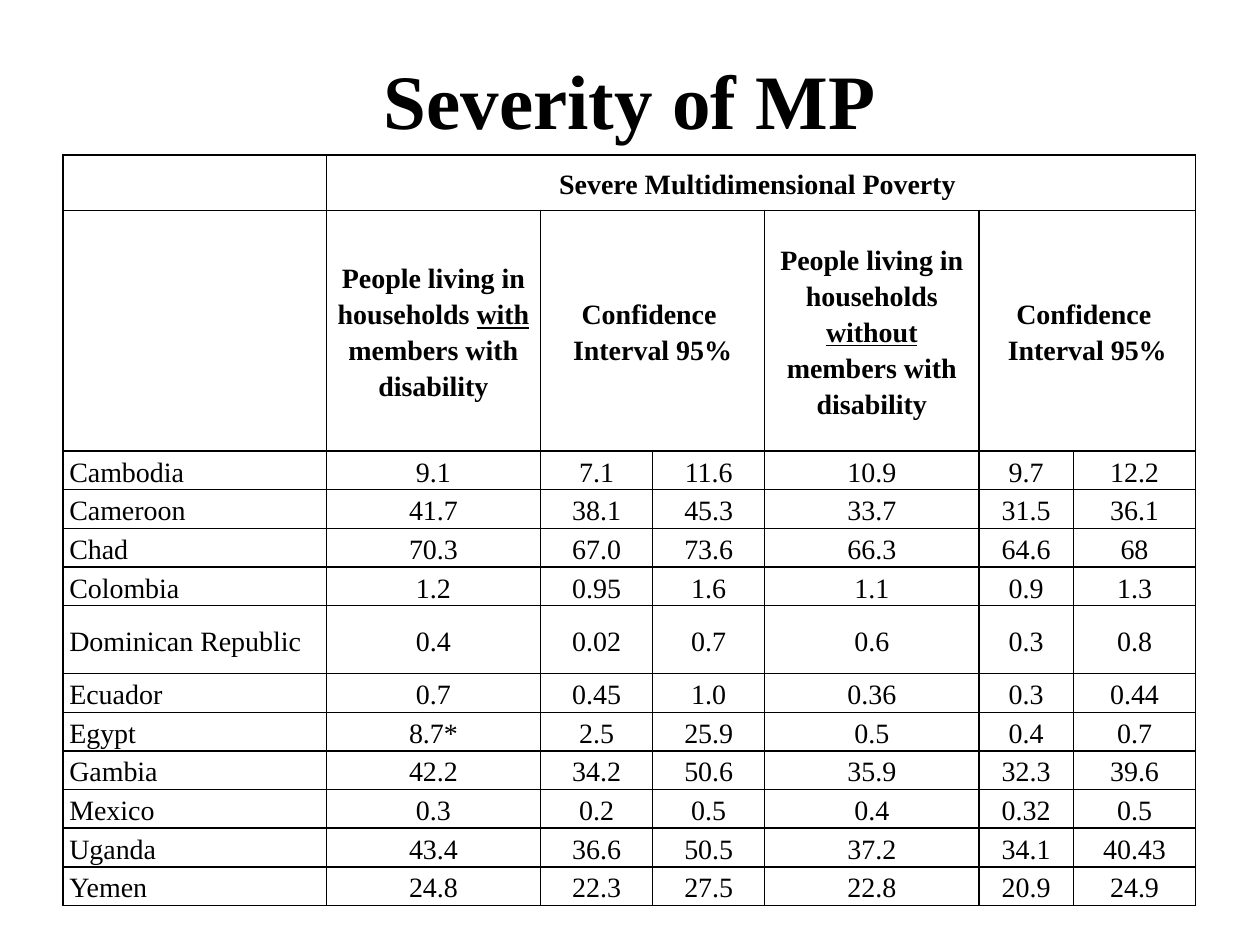
import dataclasses

import lxml.etree
import pptx
import pptx.dml.color
import pptx.enum.text
import pptx.oxml.ns
import pptx.util

Inches, Pt = pptx.util.Inches, pptx.util.Pt
ALIGN = pptx.enum.text.PP_ALIGN
ANCHOR = pptx.enum.text.MSO_ANCHOR


@dataclasses.dataclass(frozen=True)
class Theme:
    font: str = "Times New Roman"
    ink: str = "000000"
    paper: str = "FFFFFF"
    title_size: int = 44
    table_size: int = 16
    line_spacing: float = 1.15
    border: float = 1


THEME = Theme()
WIDTH, HEIGHT = 10, 7.5
MARGIN = 0.05 * WIDTH

# Table grid, in inches
COLS = [2.09, 1.7, 0.89, 0.89, 1.7, 0.75, 0.97]
HEADER_ROWS = [0.44, 1.91]
DATA_ROW, TALL_ROW = 0.26, 0.54
TALL_COUNTRY = "Dominican Republic"

# Header cells: (row, column, columns spanned, paragraphs of (text, underlined) runs)
INTERVAL = [[("Confidence ", False)], [("Interval 95%", False)]]
HEADERS = [
    (0, 1, 6, [[("Severe Multidimensional Poverty ", False)]]),
    (1, 1, 1, [[("People living in households ", False), ("with", True),
                (" members with disability", False)]]),
    (1, 2, 2, INTERVAL),
    (1, 4, 1, [[("People living in households ", False), ("without ", True),
                ("members with disability", False)]]),
    (1, 5, 2, INTERVAL),
]

# Country, with disability, interval, without disability, interval
DATA = [
    ("Cambodia", "9.1", "7.1", "11.6", "10.9", "9.7", "12.2"),
    ("Cameroon", "41.7", "38.1", "45.3", "33.7", "31.5", "36.1"),
    ("Chad", "70.3", "67.0", "73.6", "66.3", "64.6", "68"),
    ("Colombia", "1.2", "0.95", "1.6", "1.1", "0.9", "1.3"),
    (TALL_COUNTRY, "0.4", "0.02", "0.7", "0.6", "0.3", "0.8"),
    ("Ecuador", "0.7", "0.45", "1.0", "0.36", "0.3", "0.44"),
    ("Egypt", "8.7*", "2.5", "25.9", "0.5", "0.4", "0.7"),
    ("Gambia", "42.2", "34.2", "50.6", "35.9", "32.3", "39.6"),
    ("Mexico", "0.3", "0.2", "0.5", "0.4", "0.32", "0.5"),
    ("Uganda", "43.4", "36.6", "50.5", "37.2", "34.1", "40.43"),
    ("Yemen", "24.8", "22.3", "27.5", "22.8", "20.9", "24.9"),
]


def set_all(obj, values):
    for name, value in values.items():
        setattr(obj, name, value)


def rgb(color):
    return pptx.dml.color.RGBColor.from_string(color)


def write(tf, paragraphs, size, bold, align, spacing=1.0):
    """Fill a text frame with paragraphs of (text, underlined) runs."""
    for i, runs in enumerate(paragraphs):
        p = tf.add_paragraph() if i else tf.paragraphs[0]
        set_all(p, {"alignment": align, "line_spacing": spacing})
        for text, underline in runs:
            r = p.add_run()
            r.text = text
            set_all(r.font, {"name": THEME.font, "size": Pt(size),
                             "bold": bold, "underline": underline})
            r.font.color.rgb = rgb(THEME.ink)


def add_title(s, text):
    sp = s.shapes.add_textbox(Inches(MARGIN), Inches(0.04 * HEIGHT),
                              Inches(WIDTH - 2 * MARGIN), Inches(1.25))
    tf = sp.text_frame
    set_all(tf, {"word_wrap": True, "vertical_anchor": ANCHOR.TOP,
                 "margin_top": Inches(0.12)})
    write(tf, [[(text, False)]], THEME.title_size, True, ALIGN.CENTER)


def add_borders(cell):
    qn = pptx.oxml.ns.qn
    props = cell._tc.get_or_add_tcPr()
    for side in ("a:lnL", "a:lnR", "a:lnT", "a:lnB"):
        line = lxml.etree.SubElement(props, qn(side), w=str(Pt(THEME.border)))
        fill = lxml.etree.SubElement(line, qn("a:solidFill"))
        lxml.etree.SubElement(fill, qn("a:srgbClr"), val=THEME.ink)


def style_cell(cell):
    set_all(cell, {"vertical_anchor": ANCHOR.MIDDLE,
                   "margin_left": Inches(0.05), "margin_right": Inches(0.05),
                   "margin_top": 0, "margin_bottom": 0})
    add_borders(cell)
    cell.fill.solid()
    cell.fill.fore_color.rgb = rgb(THEME.paper)


def write_cell(cell, paragraphs, bold, align):
    write(cell.text_frame, paragraphs, THEME.table_size, bold, align,
          THEME.line_spacing)


def add_poverty_table(s):
    rows = HEADER_ROWS + [TALL_ROW if country == TALL_COUNTRY else DATA_ROW
                          for country, *_ in DATA]
    frame = s.shapes.add_table(len(rows), len(COLS), Inches(MARGIN), Inches(1.23),
                               Inches(sum(COLS)), Inches(sum(rows)))
    table = frame.table
    set_all(table, {"first_row": False, "horz_banding": False})
    for column, width in zip(table.columns, COLS):
        column.width = Inches(width)
    for row, height in zip(table.rows, rows):
        row.height = Inches(height)
    for cell in table.iter_cells():
        style_cell(cell)

    # Headers
    for row, col, span, paragraphs in HEADERS:
        cell = table.cell(row, col)
        if span > 1:
            cell.merge(table.cell(row, col + span - 1))
        write_cell(cell, paragraphs, True, ALIGN.CENTER)

    # Countries and values
    for row, values in enumerate(DATA, len(HEADER_ROWS)):
        for col, value in enumerate(values):
            align = ALIGN.CENTER if col else ALIGN.JUSTIFY
            write_cell(table.cell(row, col), [[(value, False)]], False, align)


def main():
    prs = pptx.Presentation()
    set_all(prs, {"slide_width": Inches(WIDTH), "slide_height": Inches(HEIGHT)})
    s = prs.slides.add_slide(prs.slide_layouts[6])
    add_title(s, "Severity of MP")
    add_poverty_table(s)
    prs.save("out.pptx")


if __name__ == "__main__":
    main()
